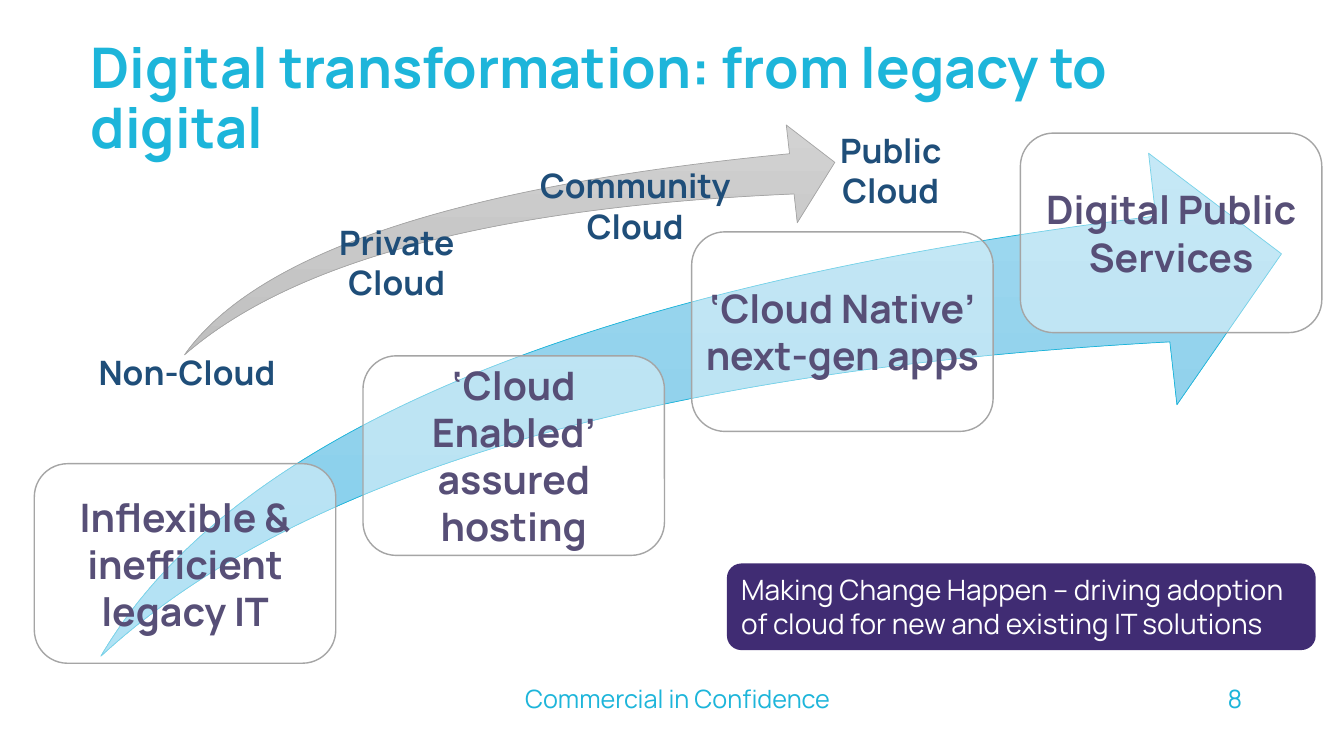
from copy import deepcopy

from lxml import etree
from pptx import Presentation
from pptx import util as u
from pptx.dml.color import RGBColor
from pptx.enum import shapes, text
from pptx.oxml.ns import qn

CYAN, GREY, PLUM, NAVY, WHITE = "1DB5DA", "A5A5A5", "574F77", "1F4E79", "FFFFFF"
LEFT, MID, RIGHT = text.PP_ALIGN.LEFT, text.PP_ALIGN.CENTER, text.PP_ALIGN.RIGHT
TOP, MIDDLE = text.MSO_ANCHOR.TOP, text.MSO_ANCHOR.MIDDLE


def hue(code):
    return RGBColor.from_string(code)


class Deck:
    font = "Manrope"

    def __init__(self, slide):
        self.slide = slide

    def letter(self, shape, words, size, color, bold=False, align=MID, anchor=MIDDLE):
        frame = shape.text_frame
        frame.word_wrap = True
        frame.vertical_anchor = anchor
        para = frame.paragraphs[0]
        para.alignment = align
        run = para.add_run()
        run.text = words
        run.font.name = self.font
        run.font.size = u.Pt(size)
        run.font.bold = bold
        run.font.color.rgb = hue(color)
        return frame

    def title(self, words, *box):
        shape = self.slide.shapes.title
        shape.left, shape.top, shape.width, shape.height = map(u.Inches, box)
        frame = self.letter(shape, words, 40, CYAN, True, LEFT)
        frame.auto_size = text.MSO_AUTO_SIZE.NONE
        frame.paragraphs[0].line_spacing = 0.9

    def label(self, words, box, size, color, **style):
        shape = self.slide.shapes.add_textbox(*map(u.Inches, box))
        return self.letter(shape, words, size, color, **style)

    def shape(self, kind, box, line=None, width=1):
        shape = self.slide.shapes.add_shape(kind, *map(u.Inches, box))
        shape.shadow.inherit = False
        if line:
            shape.line.color.rgb = hue(line)
            shape.line.width = u.Pt(width)
        else:
            shape.line.fill.background()
        return shape

    def swoosh(self, box, bends, colors, line):
        shape = self.shape(shapes.MSO_SHAPE.SWOOSH_ARROW, box, line, 0.5)
        for i, bend in enumerate(bends):
            shape.adjustments[i] = bend
        shape.fill.gradient()
        shape.fill.gradient_angle = 270
        stops = next(shape._element.spPr.iter(qn("a:gsLst")))
        stops.insert(1, deepcopy(stops[0]))
        for stop, place, color in zip(shape.fill.gradient_stops, (0, 0.5, 1), colors):
            stop.position = place
            stop.color.rgb = hue(color)

    def card(self, words, box, fill, size, color, line=None, alpha=None, **style):
        shape = self.shape(shapes.MSO_SHAPE.ROUNDED_RECTANGLE, box, line)
        shape.fill.solid()
        shape.fill.fore_color.rgb = hue(fill)
        if alpha:
            tone = shape._element.spPr.find(qn("a:solidFill"))[0]
            etree.SubElement(tone, qn("a:alpha")).set("val", str(alpha * 1000))
        return self.letter(shape, words, size, color, **style)


def main():
    prs = Presentation()
    prs.slide_width, prs.slide_height = u.Inches(13.33), u.Inches(7.5)
    deck = Deck(prs.slides.add_slide(prs.slide_layouts[5]))

    deck.title("Digital transformation: from legacy to digital", 0.8, 0.56, 12.04, 0.87)
    deck.swoosh((1.83, 1.24, 6.45, 2.28), (0.175, 0.197),
                ("D2D2D2", "C8C8C8", "C0C0C0"), GREY)
    deck.swoosh((1, 1.52, 11.71, 4.99), (0.25, 0.25),
                ("9FD9F0", "92D2EC", "7DCFEE"), CYAN)

    stages = [
        ("Inflexible & inefficient legacy IT", 4.6, 0.1),
        ("‘Cloud Enabled’ assured hosting", 3.53, 0),
        ("‘Cloud Native’ next-gen apps", 2.3, 0),
        ("Digital Public Services", 1.32, 0.1),
    ]
    for i, (words, top, inset) in enumerate(stages):
        frame = deck.card(words, (0.34 + 3.26 * i, top, 2.99, 1.98), WHITE, 28, PLUM,
                          line=GREY, alpha=40, bold=True)
        frame.margin_left = frame.margin_right = u.Inches(inset)

    clouds = [
        ("Non-Cloud", (0.81, 3.44, 2.09, 0.5)),
        ("Private Cloud", (2.9, 2.15, 2.07, 0.91)),
        ("Community Cloud", (5.05, 1.59, 2.5, 0.91)),
        ("Public Cloud", (7.82, 1.24, 2.03, 0.91)),
    ]
    for words, box in clouds:
        deck.label(words, box, 24, NAVY, bold=True, anchor=TOP)

    deck.card("Making Change Happen – driving adoption of cloud for new and existing "
              "IT solutions", (7.21, 5.59, 5.84, 0.86), "402C73", 20, WHITE,
              align=LEFT, anchor=TOP)
    deck.label("Commercial in Confidence", (4.47, 6.73, 4.5, 0.4), 18, CYAN)
    deck.label("8", (11.21, 6.73, 1.21, 0.4), 18, CYAN, align=RIGHT)
    prs.save("out.pptx")


if __name__ == "__main__":
    main()
